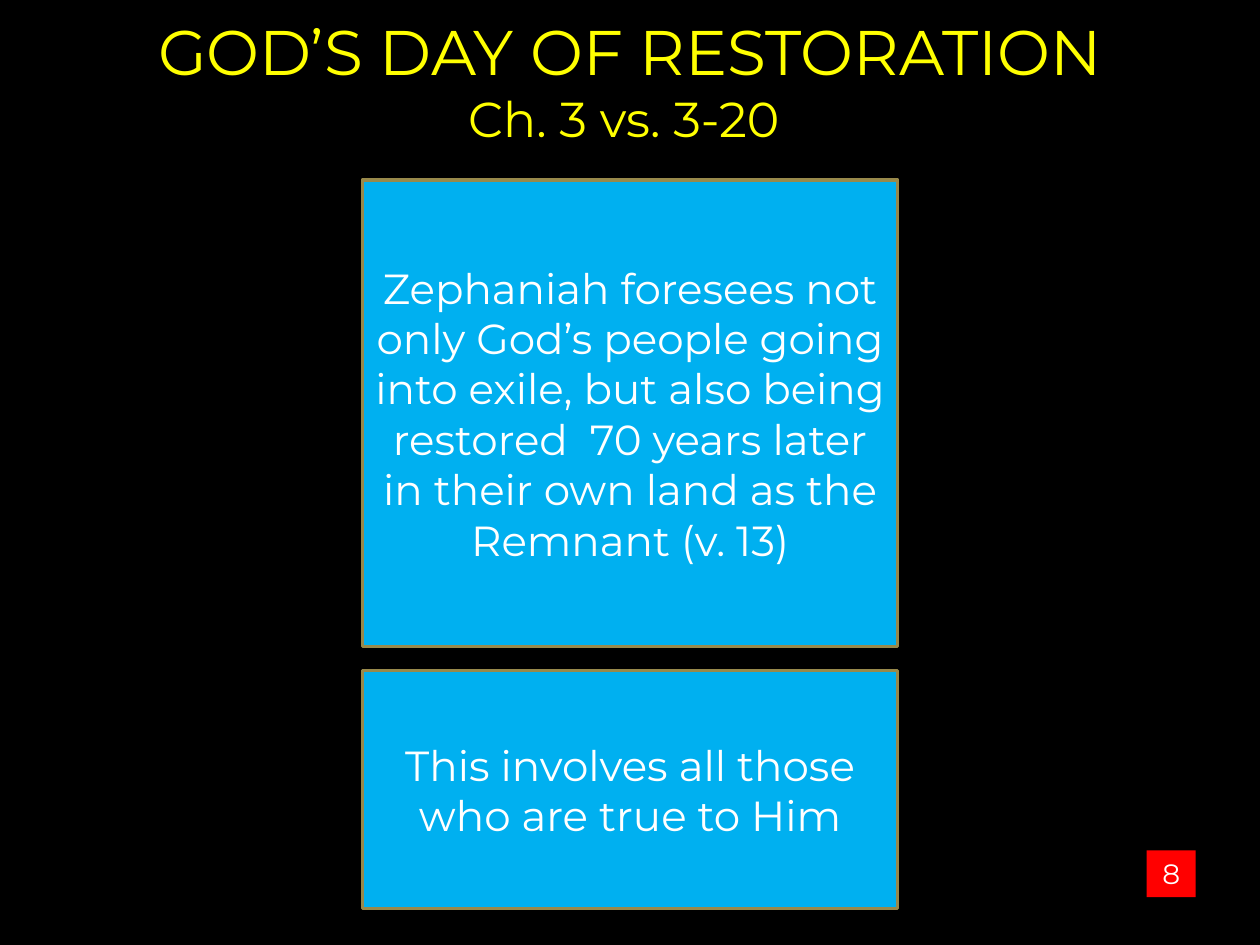
from pptx import Presentation
from pptx.dml.color import RGBColor
from pptx.enum.shapes import MSO_SHAPE
from pptx.enum.text import MSO_ANCHOR, PP_ALIGN
from pptx.util import Inches, Pt

# Content: (text, size) per paragraph, (text, height) per panel
TITLE = [("GOD’S DAY OF RESTORATION", 36), ("Ch. 3 vs. 3-20 ", 28)]
PANELS = [
    ("Zephaniah foresees not only God’s people going into exile, but also being "
     "restored  70 years later in their own land as the Remnant (v. 13)", 3.7),
    ("This involves all those who are true to Him", 1.89),
]
PAGE_NUMBER = "8"

COLORS = {"background": "000000", "title": "FFFF00", "panel": "00B0F0",
          "border": "98894B", "text": "FFFFFF", "badge": "FF0000"}
FONT = "Montserrat"
SLIDE_W, SLIDE_H = 10, 7.5
PANEL_W, PANEL_TOP, PANEL_GAP = 4.25, 1.43, 0.19


def color(name):
    return RGBColor.from_string(COLORS[name])


def write(sp, lines, color_name, anchor):
    tf = sp.text_frame
    tf.word_wrap = True
    tf.vertical_anchor = anchor
    for i, (text, size) in enumerate(lines):
        p = tf.paragraphs[0] if i == 0 else tf.add_paragraph()
        p.text = text
        p.alignment = PP_ALIGN.CENTER
        p.font.name = FONT
        p.font.size = Pt(size)
        p.font.color.rgb = color(color_name)


def add_box(s, box, fill, lines, anchor, border=None):
    sp = s.shapes.add_shape(MSO_SHAPE.RECTANGLE, *map(Inches, box))
    sp.shadow.inherit = False
    sp.fill.solid()
    sp.fill.fore_color.rgb = color(fill)
    if border:
        sp.line.color.rgb = color(border)
        sp.line.width = Pt(2)
    else:
        sp.line.fill.background()
    write(sp, lines, "text", anchor)


def main():
    prs = Presentation()
    prs.slide_width, prs.slide_height = Inches(SLIDE_W), Inches(SLIDE_H)
    s = prs.slides.add_slide(prs.slide_layouts[6])
    s.background.fill.solid()
    s.background.fill.fore_color.rgb = color("background")

    # Title across the slide
    title = s.shapes.add_textbox(0, Inches(0.05), Inches(SLIDE_W), Inches(1.18))
    write(title, TITLE, "title", MSO_ANCHOR.TOP)

    # Centred panels, stacked with an equal gap
    top = PANEL_TOP
    for text, height in PANELS:
        box = ((SLIDE_W - PANEL_W) / 2, top, PANEL_W, height)
        add_box(s, box, "panel", [(text, 24)], MSO_ANCHOR.MIDDLE, "border")
        top += height + PANEL_GAP

    # Page number badge
    add_box(s, (9.1, 6.75, 0.39, 0.37), "badge", [(PAGE_NUMBER, 16)], MSO_ANCHOR.TOP)

    prs.save("out.pptx")


if __name__ == "__main__":
    main()
